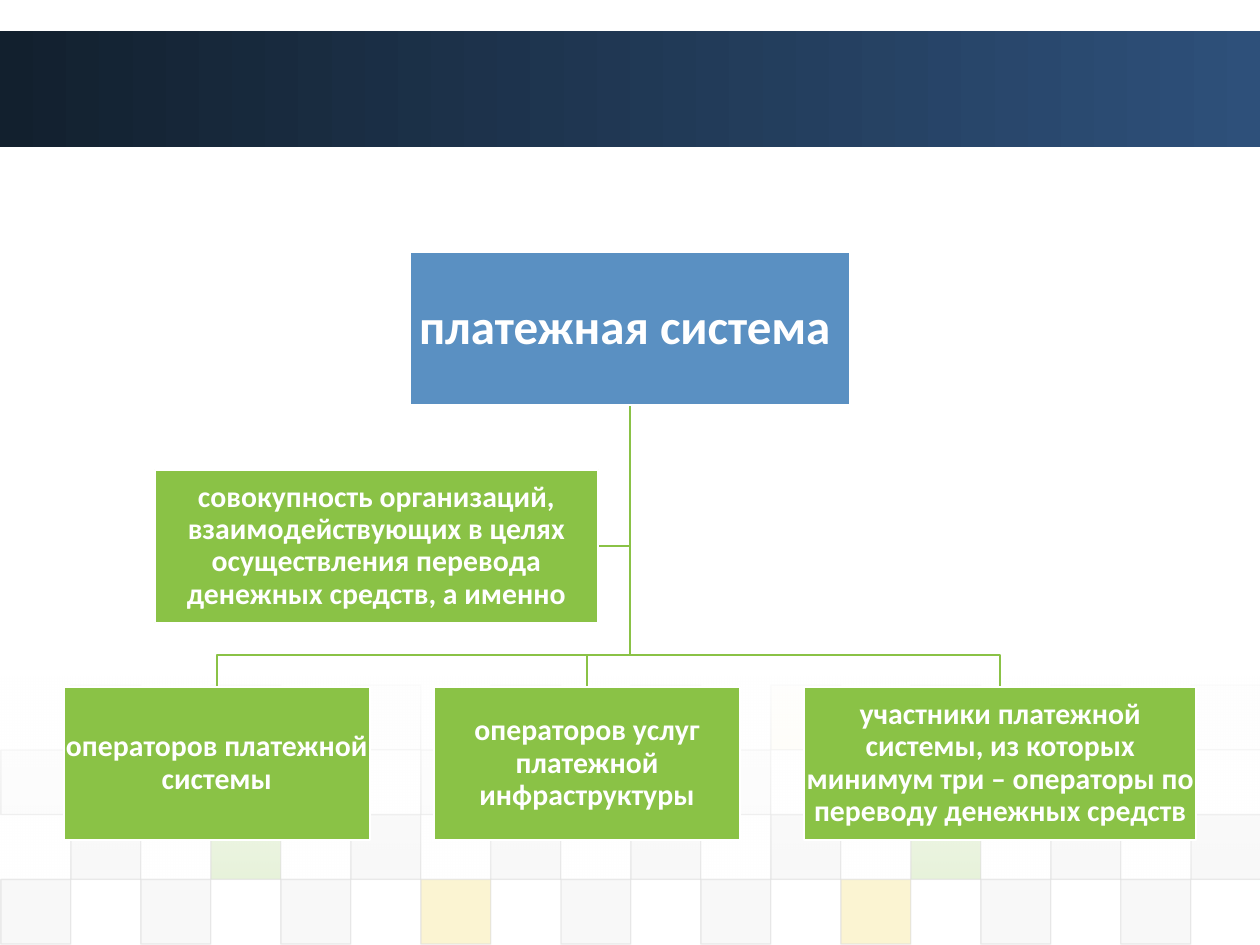
from dataclasses import dataclass

from lxml import etree
from pptx import Presentation
from pptx.dml.color import RGBColor
from pptx.enum.shapes import MSO_SHAPE
from pptx.enum.text import MSO_ANCHOR, PP_ALIGN
from pptx.oxml.ns import qn
from pptx.util import Pt

RECTANGLE = MSO_SHAPE.RECTANGLE
MIDDLE = MSO_ANCHOR.MIDDLE
CENTER = PP_ALIGN.CENTER

WHITE = "FFFFFF"
BLUE = "5A90C2"
GREEN = "8AC246"
YELLOW = "EFC821"
GREY = "DDDDDD"
PALE = "EAEAEA"
FONT = "Calibri"

SLIDE_WIDTH, SLIDE_HEIGHT = 720, 540
TILE_LEFT, TILE_TOP = 0.5, 391.5
TILE_WIDTH, TILE_HEIGHT = 40, 37
NODE_HEIGHT = 87.4
TRUNK_X = 360
BUS_Y = 374.4
MEMBERS_TOP = 392.5


@dataclass(frozen=True)
class TileRow:
    opacity: int
    colours: dict[int, str]


@dataclass(frozen=True)
class Node:
    text: str
    left: float
    top: float
    width: float
    colour: str = GREEN
    size: float = 17
    inset: float = 0.85

    @property
    def centre(self) -> float:
        return self.left + self.width / 2

    @property
    def bottom(self) -> float:
        return self.top + NODE_HEIGHT


TILE_ROWS = [
    TileRow(5, {1: YELLOW, 3: PALE, 5: PALE, 7: YELLOW, 9: GREY,
                11: YELLOW, 13: PALE, 15: GREEN, 17: PALE}),
    TileRow(10, dict.fromkeys((0, 6, 10), GREY)),
    TileRow(20, dict.fromkeys(range(1, 18, 2), GREY) | {3: GREEN, 13: GREEN}),
    TileRow(20, dict.fromkeys(range(0, 17, 2), GREY) | {6: YELLOW, 12: YELLOW}),
]

SYSTEM = Node("платежная система ", 234.6, 144.2, 251, BLUE, 28, 1.4)
DEFINITION = Node(
    "совокупность организаций, взаимодействующих в целях осуществления "
    "перевода денежных средств, а именно", 88.4, 268.4, 253.4)
MEMBERS = [
    Node("операторов платежной системы", 36.4, MEMBERS_TOP, 175),
    Node("операторов услуг платежной инфраструктуры", 248, MEMBERS_TOP, 175),
    Node("участники платежной системы, из которых минимум три – операторы "
         "по переводу денежных средств", 459.6, MEMBERS_TOP, 224),
]


def rgb(colour: str) -> RGBColor:
    return RGBColor.from_string(colour)


def set_opacity(colour_element, percent: int) -> None:
    alpha = etree.SubElement(colour_element, qn("a:alpha"))
    alpha.set("val", str(percent * 1000))


def add_rectangle(slide, left: float, top: float, width: float, height: float):
    rectangle = slide.shapes.add_shape(
        RECTANGLE, Pt(left), Pt(top), Pt(width), Pt(height))
    rectangle.shadow.inherit = False
    return rectangle


def add_gradient_band(slide, top: float, height: float, angle: float,
                      colours: tuple[str, str],
                      opacities: tuple[int, int] = (100, 100)) -> None:
    band = add_rectangle(slide, 0, top, SLIDE_WIDTH, height)
    band.line.fill.background()
    band.fill.gradient()
    band.fill.gradient_angle = angle
    for stop, colour in zip(band.fill.gradient_stops, colours):
        stop.color.rgb = rgb(colour)
    stop_colours = band.element.spPr.iter(qn("a:srgbClr"))
    for stop_colour, opacity in zip(list(stop_colours), opacities):
        if opacity < 100:
            set_opacity(stop_colour, opacity)


def add_tile(slide, column: int, row: int, colour: str, opacity: int) -> None:
    tile = add_rectangle(slide, TILE_LEFT + column * TILE_WIDTH,
                         TILE_TOP + row * TILE_HEIGHT, TILE_WIDTH, TILE_HEIGHT)
    tile.fill.solid()
    tile.fill.fore_color.rgb = rgb(colour)
    tile.line.color.rgb = rgb(GREY)
    tile.line.width = Pt(0.75)
    fill_colour, line_colour = list(tile.element.spPr.iter(qn("a:srgbClr")))
    set_opacity(fill_colour, opacity)
    set_opacity(line_colour, 60)


def add_branch(slide, points: list[tuple[float, float]]) -> None:
    start, *corners = [(Pt(x), Pt(y)) for x, y in points]
    builder = slide.shapes.build_freeform(*start)
    builder.add_line_segments(corners, close=False)
    branch = builder.convert_to_shape()
    branch.shadow.inherit = False
    branch.fill.background()
    branch.line.color.rgb = rgb(GREEN)
    branch.line.width = Pt(1)


def add_node(slide, node: Node) -> None:
    box = add_rectangle(slide, node.left, node.top, node.width, NODE_HEIGHT)
    box.fill.solid()
    box.fill.fore_color.rgb = rgb(node.colour)
    box.line.color.rgb = rgb(WHITE)
    box.line.width = Pt(1)
    frame = box.text_frame
    frame.word_wrap = True
    frame.vertical_anchor = MIDDLE
    frame.margin_left = frame.margin_right = Pt(node.inset)
    frame.margin_top = frame.margin_bottom = Pt(node.inset)
    paragraph = frame.paragraphs[0]
    paragraph.alignment = CENTER
    paragraph.line_spacing = 0.9
    run = paragraph.add_run()
    run.text = node.text
    run.font.name = FONT
    run.font.size = Pt(node.size)
    run.font.bold = True
    run.font.color.rgb = rgb(WHITE)


def main() -> None:
    presentation = Presentation()
    presentation.slide_width = Pt(SLIDE_WIDTH)
    presentation.slide_height = Pt(SLIDE_HEIGHT)
    slide = presentation.slides.add_slide(presentation.slide_layouts[6])

    add_gradient_band(slide, 18, 66, 0, ("12202E", "2E507A"))
    for row, tile_row in enumerate(TILE_ROWS):
        for column, colour in tile_row.colours.items():
            add_tile(slide, column, row, colour, tile_row.opacity)
    add_gradient_band(slide, 386.6, 116.6, 270, (WHITE, WHITE), (90, 0))

    trunk_top = (TRUNK_X, SYSTEM.bottom)
    definition_y = DEFINITION.top + NODE_HEIGHT / 2
    add_branch(slide, [trunk_top, (TRUNK_X, definition_y),
                       (DEFINITION.left + DEFINITION.width, definition_y)])
    for member in MEMBERS:
        add_branch(slide, [trunk_top, (TRUNK_X, BUS_Y),
                           (member.centre, BUS_Y), (member.centre, member.top)])
    for node in (SYSTEM, *MEMBERS, DEFINITION):
        add_node(slide, node)

    presentation.save("out.pptx")


if __name__ == "__main__":
    main()
